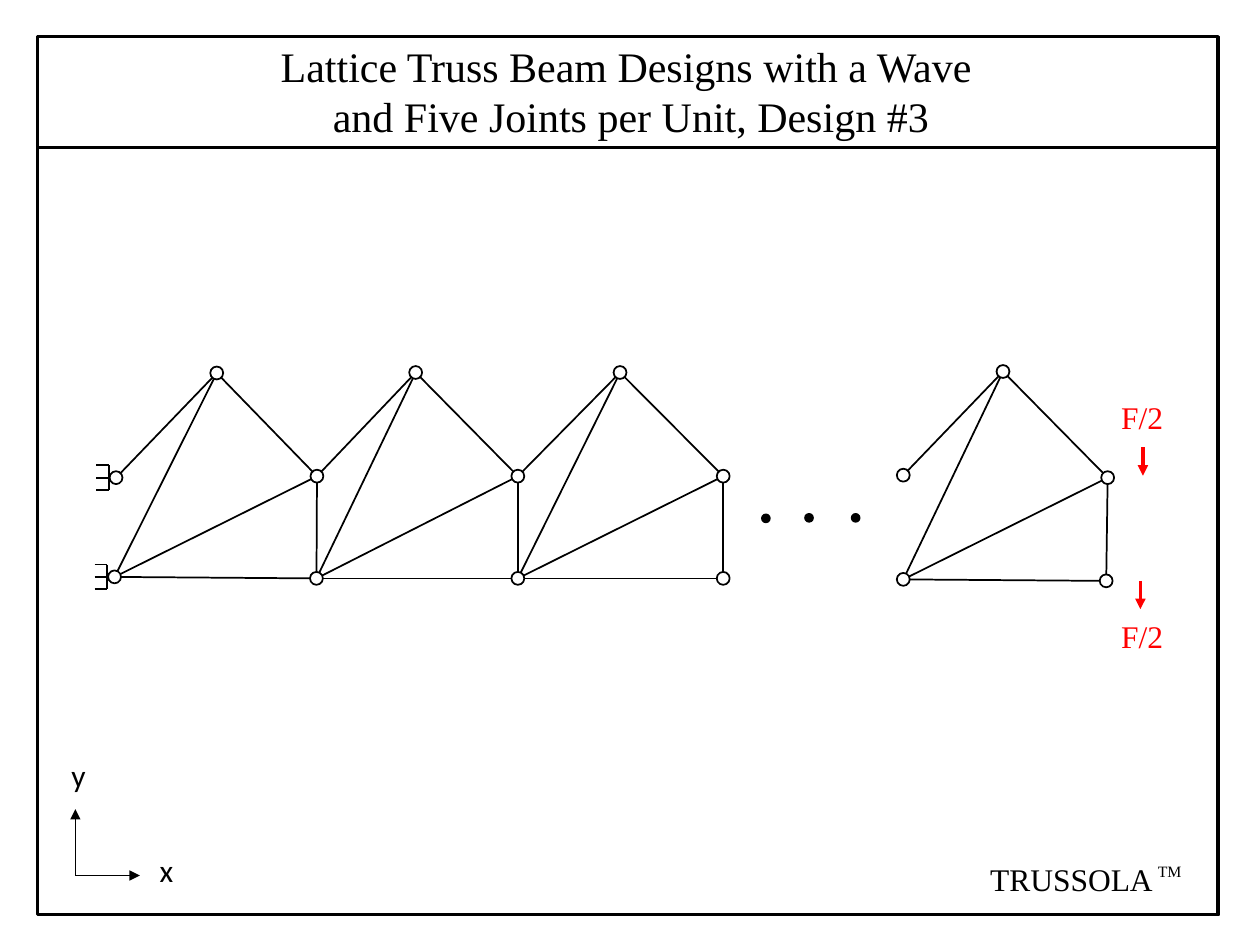
from lxml import etree
from pptx import Presentation
from pptx.dml.color import RGBColor
from pptx.enum.shapes import MSO_CONNECTOR, MSO_SHAPE
from pptx.enum.text import MSO_AUTO_SIZE
from pptx.oxml.ns import qn
from pptx.util import Cm, Pt

STRAIGHT = MSO_CONNECTOR.STRAIGHT
OVAL = MSO_SHAPE.OVAL
RECTANGLE = MSO_SHAPE.RECTANGLE
GROW = MSO_AUTO_SIZE.SHAPE_TO_FIT_TEXT
BLACK, WHITE, RED = "000000", "FFFFFF", "FF0000"
SERIF, SANS = "Times New Roman", "Calibri"

deck = Presentation()
deck.slide_width, deck.slide_height = Cm(25.4), Cm(19.05)
page = deck.slides.add_slide(deck.slide_layouts[6])


def add_line(start, end, color=BLACK, width=1, arrow=False):
    line = page.shapes.add_connector(STRAIGHT, *map(Cm, (*start, *end)))
    line.line.color.rgb = RGBColor.from_string(color)
    line.line.width = Pt(width)
    properties = line._element.spPr
    if arrow:
        etree.SubElement(properties.find(qn("a:ln")), qn("a:tailEnd"), type="triangle")
    etree.SubElement(properties, qn("a:effectLst"))


def add_text(lines, left, top, width, height, size=18, font=SERIF, color=BLACK):
    box = page.shapes.add_textbox(Cm(left), Cm(top), Cm(width), Cm(height))
    frame = box.text_frame
    frame.word_wrap = True
    frame.auto_size = GROW
    frame.text = lines
    for para in frame.paragraphs:
        para.font.size = Pt(size)
        para.font.name = font
        para.font.color.rgb = RGBColor.from_string(color)
    return frame


frame_box = page.shapes.add_shape(RECTANGLE, Cm(0.76), Cm(0.74), Cm(23.8), Cm(17.7))
frame_box.shadow.inherit = False
frame_box.fill.background()
frame_box.line.color.rgb = RGBColor.from_string(BLACK)
frame_box.line.width = Pt(2)
add_line((0.76, 2.97), (24.56, 2.97), width=2)

title = add_text("Lattice Truss Beam Designs with a Wave\nand Five Joints per Unit, Design #3",
                 5.41, 0.69, 14.94, 2.31, size=24)
title.paragraphs[1]._p.get_or_add_pPr().set("marL", str(Cm(1.05)))

tops = [(4.37, 7.52), (8.38, 7.51), (12.5, 7.51), (20.22, 7.49)]
middles = [(2.34, 9.63), (6.39, 9.6), (10.44, 9.6), (14.58, 9.6), (18.21, 9.58), (22.33, 9.63)]
bottoms = [(2.31, 11.63), (6.38, 11.66), (10.44, 11.66), (14.58, 11.66), (18.21, 11.68), (22.3, 11.71)]

for top, left in zip(tops, (0, 1, 2, 4)):
    right = left + 1
    add_line(middles[left], top)
    add_line(bottoms[left], top)
    add_line(top, middles[right])
    add_line(bottoms[left], middles[right])
    add_line(middles[right], bottoms[right])
    add_line(bottoms[left], bottoms[right])

for x, y in (middles[0], bottoms[0]):
    wall = x - 0.15
    add_line((wall, y - 0.25), (wall, y + 0.25))
    for offset in (-0.25, 0, 0.25):
        add_line((wall - 0.25, y + offset), (wall, y + offset))

dots = [(15.44, 10.45), (16.31, 10.44), (17.25, 10.44)]
for centers, diameter, fill in ((tops + middles + bottoms, 0.26, WHITE), (dots, 0.16, BLACK)):
    for x, y in centers:
        circle = page.shapes.add_shape(OVAL, Cm(x - diameter / 2), Cm(y - diameter / 2),
                                       Cm(diameter), Cm(diameter))
        circle.shadow.inherit = False
        circle.fill.solid()
        circle.fill.fore_color.rgb = RGBColor.from_string(fill)
        circle.line.color.rgb = RGBColor.from_string(BLACK)
        circle.line.width = Pt(1)

for x, y, label_top in ((23.04, 9.02, 7.9), (22.99, 11.71, 12.32)):
    add_line((x, y), (x, y + 0.57), RED, 2, arrow=True)
    add_text("F/2", 22.35, label_top, 1.52, 1.02, color=RED)

axis_origin = (1.52, 17.65)
for tip in ((2.82, 17.65), (1.52, 16.31)):
    add_line(axis_origin, tip, width=0.5, arrow=True)
for name, left, top in (("x", 2.97, 17.04), ("y", 1.19, 15.11)):
    add_text(name, left, top, 0.79, 1.02, font=SANS)

add_text("TRUSSOLA", 19.71, 17.22, 3.86, 1.02)
add_text("TM", 23.09, 17.25, 1.3, 0.61, size=9)

deck.save("out.pptx")
